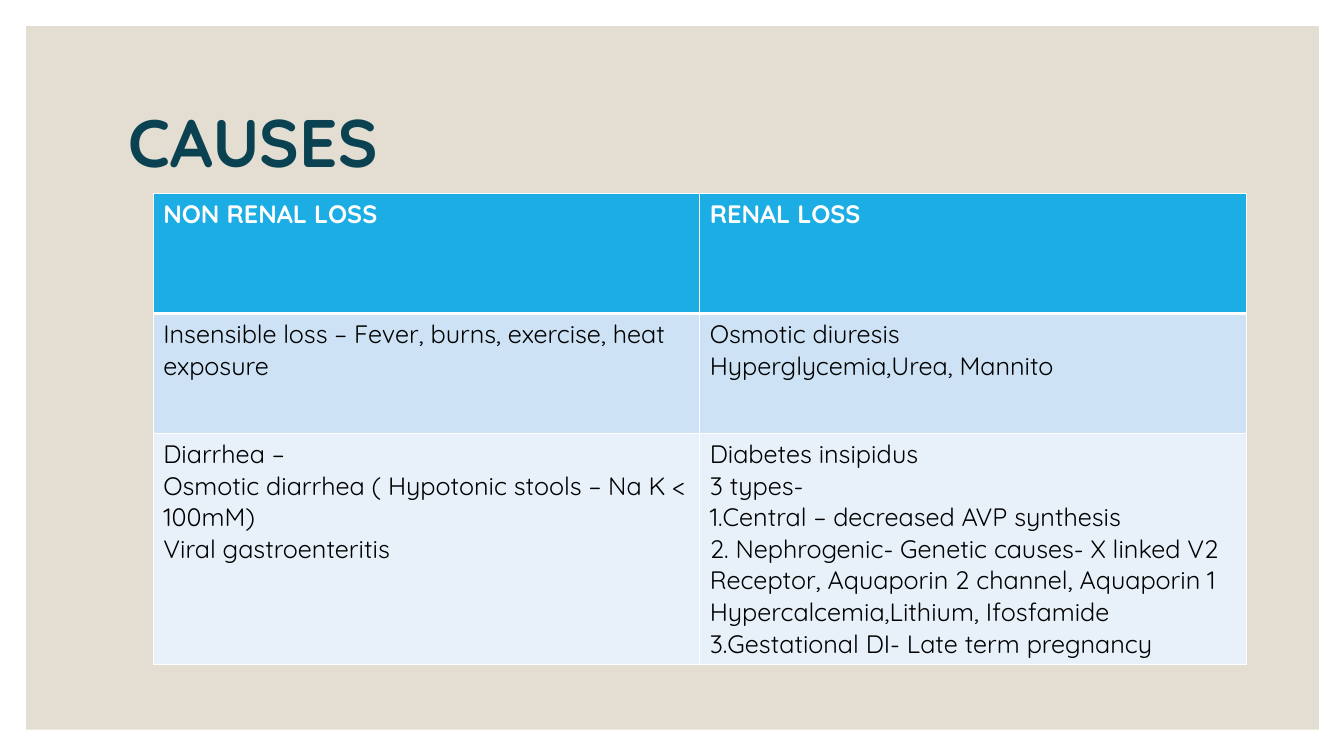
from dataclasses import dataclass

from lxml import etree
from pptx import Presentation
from pptx import util as u
from pptx.dml.color import RGBColor
from pptx.enum import shapes, text
from pptx.oxml import ns


@dataclass(frozen=True)
class Theme:
    font: str = "Quicksand"
    title_size: int = 48
    body_size: int = 18
    panel: str = "E3DED1"
    title: str = "0A4252"
    white: str = "FFFFFF"
    black: str = "000000"
    row_fills: tuple = ("1CADE4", "CDE3F5", "E8F1FA")


theme = Theme()


def style_run(r, size, color, bold):
    r.font.name = theme.font
    r.font.size = u.Pt(size)
    r.font.bold = bold
    r.font.color.rgb = RGBColor.from_string(color)


def add_border(cell, side, width):
    ln = etree.SubElement(cell._tc.get_or_add_tcPr(), ns.qn(f"a:{side}"), w=str(u.Pt(width)))
    fill = etree.SubElement(ln, ns.qn("a:solidFill"))
    etree.SubElement(fill, ns.qn("a:srgbClr"), val=theme.white)


prs = Presentation()
prs.slide_width, prs.slide_height = u.Inches(13.33), u.Inches(7.5)
s = prs.slides.add_slide(prs.slide_layouts[6])
s.background.fill.solid()
s.background.fill.fore_color.rgb = RGBColor.from_string(theme.white)

# Background panel
panel = s.shapes.add_shape(shapes.MSO_SHAPE.RECTANGLE, u.Inches(0.26), u.Inches(0.26),
                           u.Inches(12.82), u.Inches(6.98))
panel.shadow.inherit = False
panel.fill.solid()
panel.fill.fore_color.rgb = RGBColor.from_string(theme.panel)
panel.line.fill.background()

# Title
title = s.shapes.add_textbox(u.Inches(1.17), u.Inches(0.7), u.Inches(11), u.Inches(1.5))
tf = title.text_frame
tf.word_wrap = True
tf.vertical_anchor = text.MSO_ANCHOR.MIDDLE
tf.text = "CAUSES"
p = tf.paragraphs[0]
p.line_spacing = 0.9
style_run(p.runs[0], theme.title_size, theme.title, True)

# Table of causes
causes = [
    ("NON RENAL LOSS", "RENAL LOSS"),
    ("Insensible loss – Fever, burns, exercise, heat exposure",
     "Osmotic diuresis\nHyperglycemia,Urea, Mannito"),
    ("Diarrhea –\n"
     "Osmotic diarrhea ( Hypotonic stools – Na K < 100mM)\n"
     "Viral gastroenteritis",
     "Diabetes insipidus\n"
     "3 types-\n"
     "1.Central – decreased AVP synthesis\n"
     "2. Nephrogenic- Genetic causes- X linked V2 Receptor, Aquaporin 2 channel, Aquaporin 1\n"
     "Hypercalcemia,Lithium, Ifosfamide\n"
     "3.Gestational DI- Late term pregnancy"),
]
row_heights = (1.19, 1.19, 2.29)
table = s.shapes.add_table(len(causes), 2, u.Inches(1.52), u.Inches(1.92),
                           u.Inches(10.84), u.Inches(sum(row_heights))).table

for i, (row, height, fill) in enumerate(zip(causes, row_heights, theme.row_fills)):
    table.rows[i].height = u.Inches(height)
    header = i == 0
    for j, content in enumerate(row):
        cell = table.cell(i, j)
        cell.text_frame.text = content
        for p in cell.text_frame.paragraphs:
            style_run(p.runs[0], theme.body_size, theme.white if header else theme.black, header)
        # Borders come before the fill in the cell properties
        for side in ("lnL", "lnR", "lnT", "lnB"):
            heavy = (header and side == "lnB") or (i == 1 and side == "lnT")
            add_border(cell, side, 3 if heavy else 1)
        cell.fill.solid()
        cell.fill.fore_color.rgb = RGBColor.from_string(fill)

prs.save("out.pptx")
